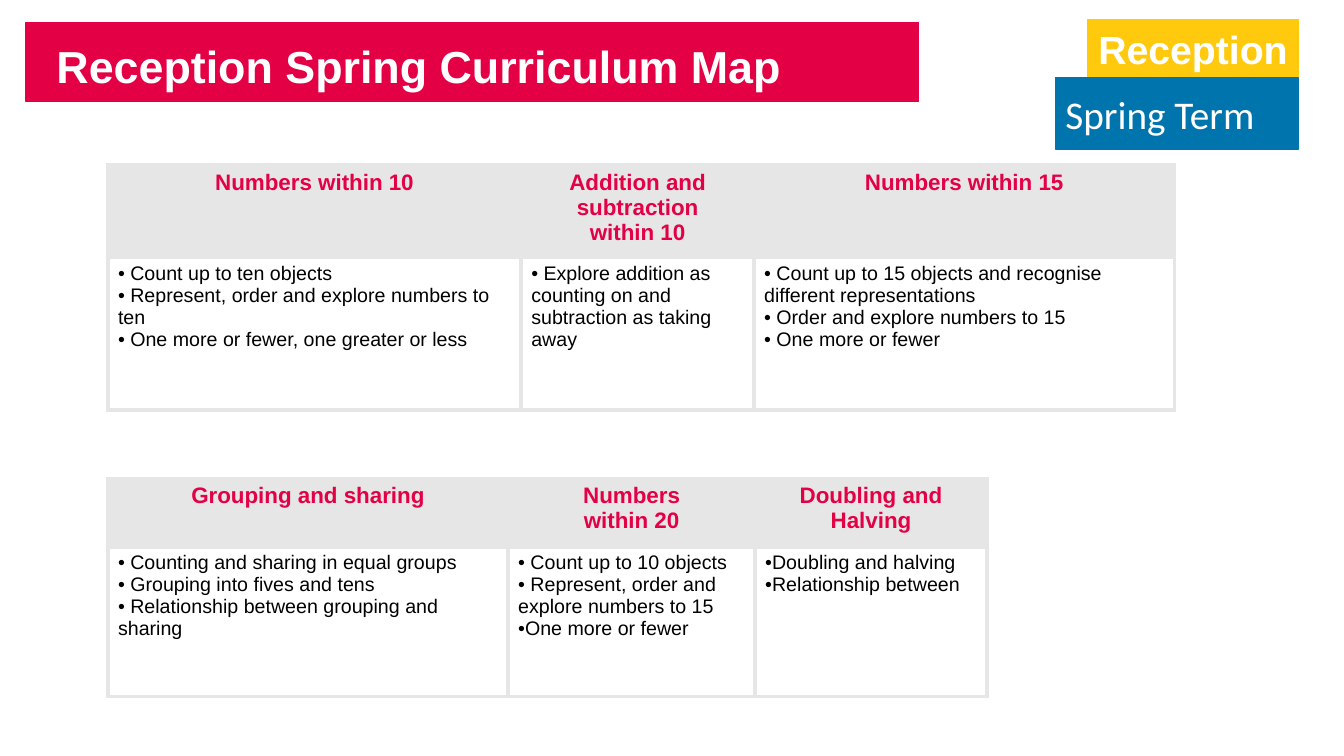
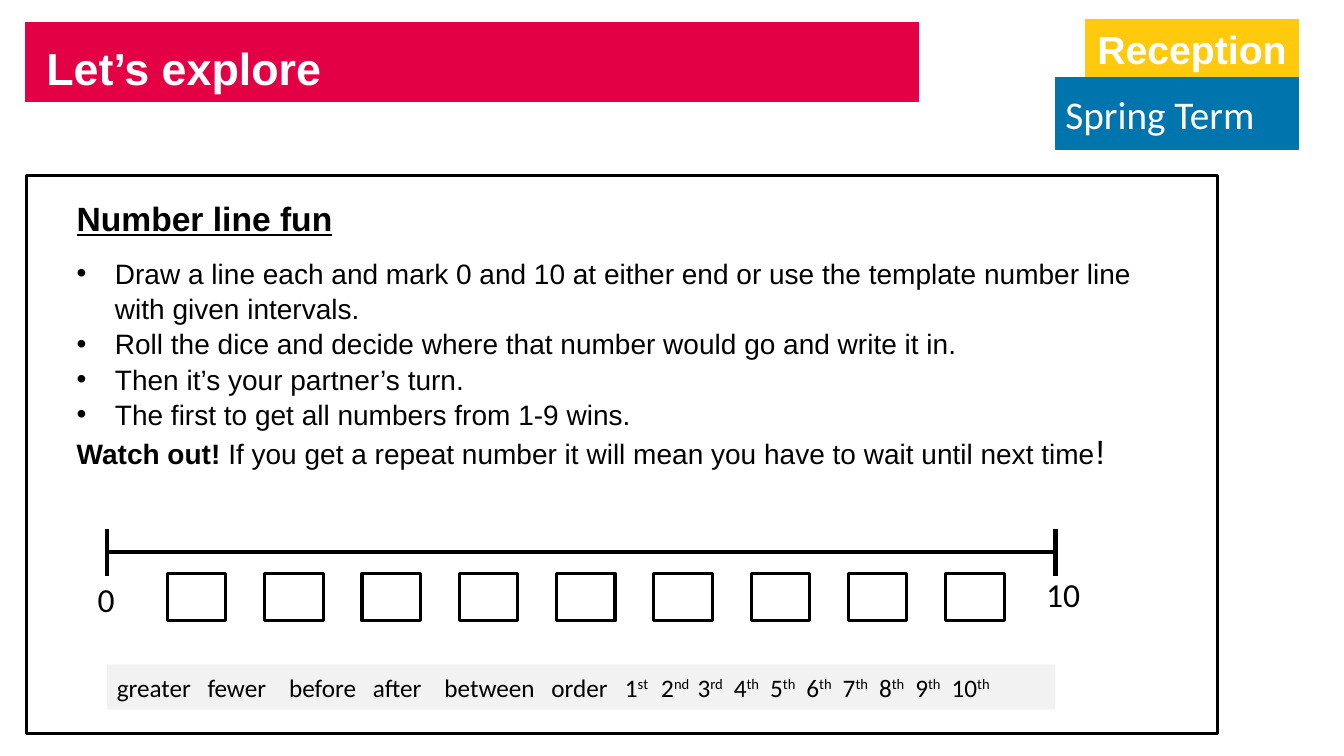
from lxml.etree import SubElement
from pptx import Presentation
from pptx.dml.color import RGBColor
from pptx.enum.dml import MSO_THEME_COLOR
from pptx.enum.shapes import MSO_CONNECTOR, MSO_SHAPE
from pptx.enum.text import MSO_ANCHOR, MSO_AUTO_SIZE, PP_ALIGN
from pptx.oxml import parse_xml
from pptx.oxml.ns import nsdecls, qn
from pptx.util import Inches, Pt

SLIDE_WIDTH, SLIDE_HEIGHT = Inches(13.33), Inches(7.5)
CRIMSON = RGBColor(0xE4, 0x00, 0x45)
YELLOW = RGBColor(0xFF, 0xC9, 0x0D)
BLUE = RGBColor(0x00, 0x74, 0xAC)
WHITE = RGBColor(0xFF, 0xFF, 0xFF)
BLACK = RGBColor(0x00, 0x00, 0x00)
GREY = RGBColor(0xE6, 0xE6, 0xE6)
PALE_GREY = RGBColor(0xF2, 0xF2, 0xF2)

TAG_RIGHT = 96.6
TABLE_LEFT = 8.03
LINE_LEFT, LINE_RIGHT, LINE_Y = 7.95, 78.53, 73.07
TICK_REACH = 3.13
BOX_COUNT, BOX_LEFT, BOX_PITCH = 9, 12.45, 7.24

NUMBERS_TABLE = {
    "Numbers within 10": [
        " Count up to ten objects",
        " Represent, order and explore numbers to ten",
        " One more or fewer, one greater or less",
    ],
    "Addition and\nsubtraction\nwithin 10": [
        " Explore addition as counting on and subtraction as taking away",
    ],
    "Numbers within 15": [
        " Count up to 15 objects and recognise different representations",
        " Order and explore numbers to 15",
        " One more or fewer",
    ],
}
GROUPING_TABLE = {
    "Grouping and sharing": [
        " Counting and sharing in equal groups",
        " Grouping into fives and tens",
        " Relationship between grouping and sharing",
    ],
    "Numbers\nwithin 20": [
        " Count up to 10 objects",
        " Represent, order and explore numbers to 15",
        "One more or fewer",
    ],
    "Doubling and\nHalving": ["Doubling and halving", "Relationship between"],
}
HEADING = "Number line fun"
STEPS = [
    "Draw a line each and mark 0 and 10 at either end or use the template "
    "number line with given intervals.",
    "Roll the dice and decide where that number would go and write it in.",
    "Then it’s your partner’s turn.",
    "The first to get all numbers from 1-9 wins.",
]
WARNING = [
    ("Watch out! ", 20, True),
    ("If you get a repeat number it will mean you have to wait until next time", 20, False),
    ("!", 24, False),
]
WORDS = ["greater", "fewer", "before", "after", "between", "order"]
WORD_STOPS = [0.9, 1.71, 2.54, 3.25, 4.31]
ORDINALS = ["st", "nd", "rd"] + ["th"] * 7
ORDINAL_START, ORDINAL_PITCH = 5.04, 0.36


def across(share):
    """Return a percentage of the slide width."""
    return round(SLIDE_WIDTH * share / 100)


def down(share):
    """Return a percentage of the slide height."""
    return round(SLIDE_HEIGHT * share / 100)


def frame(left, top, width, height):
    """Turn slide percentages into a position and size."""
    return across(left), down(top), across(width), down(height)


def style_font(font, size, color, name="Arial", bold=False):
    """Set the look of a run."""
    font.name, font.size, font.bold = name, Pt(size), bold
    font.color.rgb = color


def style_paragraph(paragraph, size, color, name="Arial", bold=False, align=PP_ALIGN.LEFT):
    """Align a paragraph and set the look of its runs."""
    paragraph.alignment = align
    for run in paragraph.runs:
        style_font(run.font, size, color, name, bold)


def set_bullet(paragraph, shown=True, indent=0):
    """Show or hide a round bullet with a hanging indent."""
    properties = paragraph._p.get_or_add_pPr()
    properties.set("marL", str(Inches(indent)))
    properties.set("indent", str(-Inches(indent)))
    if shown:
        SubElement(properties, qn("a:buFont"), typeface="Arial")
        SubElement(properties, qn("a:buChar"), char="•")
    else:
        SubElement(properties, qn("a:buNone"))


def add_block(slide, place, fill=None, line=None, line_width=1.0):
    """Add a plain rectangle."""
    block = slide.shapes.add_shape(MSO_SHAPE.RECTANGLE, *frame(*place))
    block.shadow.inherit = False
    if fill is None:
        block.fill.background()
    else:
        block.fill.solid()
        block.fill.fore_color.rgb = fill
    if line is None:
        block.line.fill.background()
    else:
        block.line.color.rgb = line
        block.line.width = Pt(line_width)
    return block


def add_tag(slide, place, label, color, anchor, **look):
    """Add a coloured corner tag with a white label."""
    tag = add_block(slide, place, color, color)
    tag.text_frame.text = label
    tag.text_frame.vertical_anchor = anchor
    style_paragraph(tag.text_frame.paragraphs[0], 28, WHITE, **look)


def add_tags(slide, reception_left):
    """Add the class tag and the term tag."""
    add_tag(slide, (reception_left, 2.67, TAG_RIGHT - reception_left, 7.6), "Reception",
            YELLOW, MSO_ANCHOR.MIDDLE, bold=True, align=PP_ALIGN.CENTER)
    add_tag(slide, (78.53, 10.27, TAG_RIGHT - 78.53, 9.47), "Spring Term",
            BLUE, MSO_ANCHOR.MIDDLE, name="Calibri")


def place_text(holder, place):
    """Move a placeholder and fix its text layout."""
    holder.left, holder.top, holder.width, holder.height = frame(*place)
    text = holder.text_frame
    text.word_wrap = True
    text.auto_size = MSO_AUTO_SIZE.NONE
    text.vertical_anchor = MSO_ANCHOR.TOP
    return text


def set_title(slide, wording, left, top):
    """Write the slide title over the crimson band."""
    text = place_text(slide.shapes.title, (left, top, 60, 8.53))
    text.text = wording
    text.vertical_anchor = MSO_ANCHOR.MIDDLE
    style_paragraph(text.paragraphs[0], 32, WHITE, bold=True)


def add_master_band(presentation, slide):
    """Put the crimson title band on the slide master."""
    band = add_block(slide, (1.95, 2.95, 66.4, 10.5), CRIMSON, CRIMSON)
    presentation.slide_master.shapes.element.append(band.element)


def set_borders(cell):
    """Draw grey borders on all sides of a cell."""
    properties = cell._tc.get_or_add_tcPr()
    for position, side in enumerate("LRTB"):
        properties.insert(position, parse_xml(
            f'<a:ln{side} {nsdecls("a")} w="{Pt(3)}"><a:solidFill>'
            f'<a:srgbClr val="{GREY}"/></a:solidFill></a:ln{side}>'))


def add_topic_table(slide, topics, top, widths, heights):
    """Add a table of topic headings above their bulleted aims."""
    table = slide.shapes.add_table(
        2, len(topics), *frame(TABLE_LEFT, top, sum(widths), sum(heights))).table
    table.first_row = table.horz_banding = False
    for row, height in zip(table.rows, heights):
        row.height = down(height)
    for index, (topic, aims) in enumerate(topics.items()):
        table.columns[index].width = across(widths[index])
        heading, body = table.cell(0, index), table.cell(1, index)
        heading.text_frame.text = topic
        heading.fill.solid()
        heading.fill.fore_color.rgb = GREY
        for paragraph in heading.text_frame.paragraphs:
            style_paragraph(paragraph, 16, CRIMSON, bold=True, align=PP_ALIGN.CENTER)
        body.text_frame.text = "\n".join(aims)
        body.fill.background()
        for paragraph in body.text_frame.paragraphs:
            style_paragraph(paragraph, 14, BLACK)
            set_bullet(paragraph)
        set_borders(heading)
        set_borders(body)


def write_instructions(holder):
    """Write the game heading, its steps and the warning."""
    text = place_text(holder, (4.95, 25.47, 82.58, 36.8))
    text.text = "\n".join([HEADING, *STEPS])
    heading, *steps = text.paragraphs
    style_paragraph(heading, 24, BLACK, bold=True)
    heading.runs[0].font.underline = True
    for step in steps:
        style_paragraph(step, 20, BLACK)
        step.line_spacing = 1.05
    warning = text.add_paragraph()
    for wording, size, bold in WARNING:
        run = warning.add_run()
        run.text = wording
        style_font(run.font, size, BLACK, bold=bold)
    for paragraph in text.paragraphs:
        paragraph.space_before = Pt(0)
        paragraph.space_after = Pt(12 if paragraph._p is heading._p else 0)
        is_step = any(paragraph._p is step._p for step in steps)
        set_bullet(paragraph, is_step, 0.38 if is_step else 0)


def add_stroke(slide, start, end):
    """Add a thick black line between two points."""
    stroke = slide.shapes.add_connector(
        MSO_CONNECTOR.STRAIGHT, across(start[0]), down(start[1]), across(end[0]), down(end[1]))
    stroke.line.color.rgb = BLACK
    stroke.line.width = Pt(3)
    SubElement(stroke.element.spPr, qn("a:effectLst"))


def add_end_label(slide, number, place):
    """Label one end of the number line."""
    text = slide.shapes.add_textbox(*frame(*place)).text_frame
    text.text = number
    text.word_wrap = False
    style_paragraph(text.paragraphs[0], 24, BLACK, "Calibri")


def add_number_line(slide):
    """Draw the number line with its ticks, answer boxes and labels."""
    add_stroke(slide, (LINE_LEFT, LINE_Y), (LINE_RIGHT, LINE_Y))
    for end in (LINE_LEFT, LINE_RIGHT):
        add_stroke(slide, (end, LINE_Y + TICK_REACH), (end, LINE_Y - TICK_REACH))
    for index in range(BOX_COUNT):
        add_block(slide, (BOX_LEFT + index * BOX_PITCH, 75.87, 4.35, 6.27),
                  line=BLACK, line_width=2.25)
    add_end_label(slide, "0", (6.53, 75.87, 2.78, 6.67))
    add_end_label(slide, "10", (77.1, 75.2, 4.05, 6.67))


def add_vocabulary(slide):
    """Add the strip of key words and ordinals, spaced by tab stops."""
    strip = add_block(slide, (LINE_LEFT, 87.87, LINE_RIGHT - LINE_LEFT, 6), PALE_GREY)
    strip.text_frame.vertical_anchor = MSO_ANCHOR.MIDDLE
    paragraph = strip.text_frame.paragraphs[0]
    paragraph.text = "\t".join(WORDS)
    for number, suffix in enumerate(ORDINALS, 1):
        paragraph.add_run().text = f"\t{number}"
        raised = paragraph.add_run()
        raised.text = suffix
        raised._r.get_or_add_rPr().set("baseline", "30000")
    style_paragraph(paragraph, 18, BLACK, "Calibri")
    stops = WORD_STOPS + [ORDINAL_START + ORDINAL_PITCH * i for i in range(len(ORDINALS))]
    tabs = SubElement(paragraph._p.get_or_add_pPr(), qn("a:tabLst"))
    for stop in stops:
        SubElement(tabs, qn("a:tab"), pos=str(Inches(stop)), algn="l")


def build_curriculum_map(presentation):
    """Build the slide with the two topic tables."""
    slide = presentation.slides.add_slide(presentation.slide_layouts[5])
    add_master_band(presentation, slide)
    add_tags(slide, 80.93)
    set_title(slide, "Reception Spring Curriculum Map", 3.45, 4.4)
    add_topic_table(slide, NUMBERS_TABLE, 21.87, (30.75, 17.33, 31.28), (12.2, 20.13))
    add_topic_table(slide, GROUPING_TABLE, 63.33, (29.78, 18.38, 17.25), (9, 19.8))


def build_explore(presentation):
    """Build the slide with the number line game."""
    slide = presentation.slides.add_slide(presentation.slide_layouts[1])
    panel = add_block(slide, (1.95, 23.2, 88.65, 73.87), WHITE, BLACK, 2.25)
    slide.shapes.element.insert(2, panel.element)
    add_tags(slide, 80.78)
    set_title(slide, "Let’s explore", 2.7, 4.7)
    write_instructions(slide.placeholders[1])
    add_number_line(slide)
    add_vocabulary(slide)


def main():
    """Build and save the presentation."""
    presentation = Presentation()
    presentation.slide_width, presentation.slide_height = SLIDE_WIDTH, SLIDE_HEIGHT
    build_curriculum_map(presentation)
    build_explore(presentation)
    presentation.save("out.pptx")


if __name__ == "__main__":
    main()
